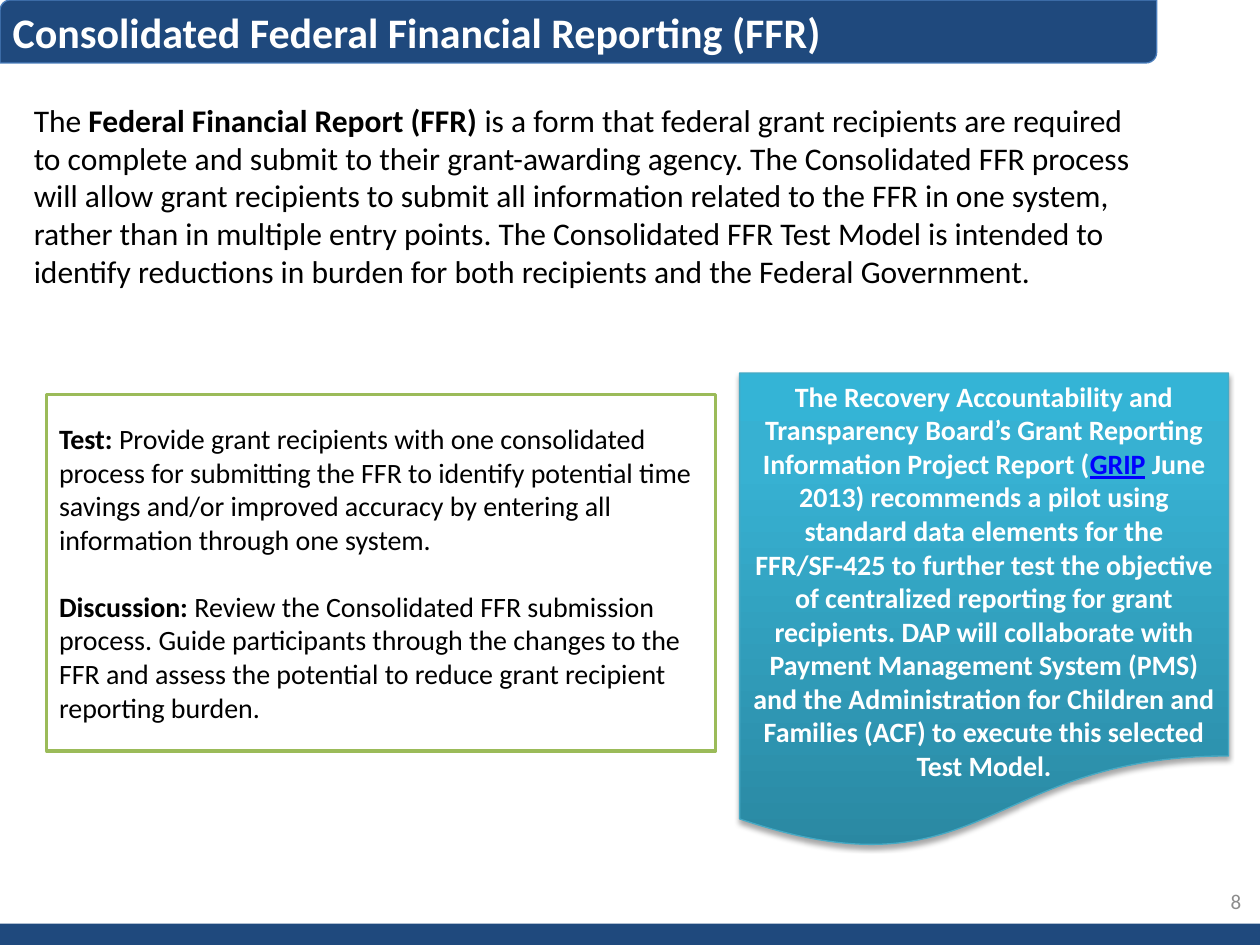
from copy import deepcopy

from pptx import Presentation
from pptx.dml.color import RGBColor
from pptx.enum.shapes import MSO_SHAPE as SHAPE
from pptx.enum.text import MSO_ANCHOR as ANCHOR, PP_ALIGN as ALIGN
from pptx.oxml import parse_xml
from pptx.oxml.ns import nsdecls, qn
from pptx.util import Inches, Pt

FONT = "Calibri"
NAVY = RGBColor(0x1F, 0x49, 0x7D)
BANNER_LINE = RGBColor(0x4B, 0x7E, 0xBC)
GREEN = RGBColor(0x9B, 0xBB, 0x59)
TEAL_LINE = RGBColor(0x46, 0xAA, 0xC5)
TEAL_STOPS = [
    (0, RGBColor(0x2A, 0x88, 0xA2)),
    (0.8, RGBColor(0x37, 0xB1, 0xD2)),
    (1, RGBColor(0x34, 0xB4, 0xD6)),
]
BLACK = RGBColor(0, 0, 0)
WHITE = RGBColor(0xFF, 0xFF, 0xFF)
GREY = RGBColor(0x8C, 0x8C, 0x8C)
LINK_BLUE = RGBColor(0, 0, 0xFF)

TITLE = "Consolidated Federal Financial Reporting (FFR)"
INTRO = [
    ("The ", False),
    ("Federal Financial Report (FFR) ", True),
    ("is a form that federal grant recipients are required to complete and submit to "
     "their grant-awarding agency. The Consolidated FFR process will allow grant "
     "recipients to submit all information related to the FFR in one system, rather than "
     "in multiple entry points. The Consolidated FFR Test Model is intended to identify "
     "reductions in burden for both recipients and the Federal Government.", False),
]
TEST = [
    ("Test: ", True),
    ("Provide grant recipients with one consolidated process for submitting the FFR to "
     "identify potential time savings and/or improved accuracy by entering all "
     "information through one system.", False),
]
DISCUSSION = [
    ("Discussion: ", True),
    ("Review the Consolidated FFR submission process. Guide participants through the "
     "changes to the FFR and assess the potential to reduce grant recipient reporting "
     "burden.", False),
]
GRIP = [
    ("The Recovery Accountability and Transparency Board’s Grant Reporting Information "
     "Project Report (", True),
    ("GRIP", True),
    (" June 2013) recommends a pilot using standard data elements for the FFR/SF-425 to "
     "further test the objective of centralized reporting for grant recipients. DAP will "
     "collaborate with Payment Management System (PMS) and the Administration for "
     "Children and Families (ACF) to execute this selected Test Model.", True),
]


def add_box(s, kind, box, fill=None, line=None, width=0.75):
    """Add a preset shape without shadow."""
    sp = s.shapes.add_shape(kind, *map(Inches, box))
    sp.shadow.inherit = False
    if fill is not None:
        sp.fill.solid()
        sp.fill.fore_color.rgb = fill
    if line is None:
        sp.line.fill.background()
    else:
        sp.line.color.rgb = line
        sp.line.width = Pt(width)
    return sp


def write(sp, paragraphs, size, color, align=ALIGN.LEFT, anchor=ANCHOR.TOP, gap=0):
    """Fill a shape with paragraphs made of (text, bold) runs."""
    tf = sp.text_frame
    tf.word_wrap = True
    tf.vertical_anchor = anchor
    for i, runs in enumerate(paragraphs):
        p = tf.add_paragraph() if i else tf.paragraphs[0]
        p.alignment = align
        if i:
            p.space_before = Pt(gap)
        for text, bold in runs:
            r = p.add_run()
            r.text = text
            r.font.name, r.font.size, r.font.bold = FONT, Pt(size), bold
            r.font.color.rgb = color


def add_text(s, box, runs, size, color, **layout):
    """Add a text box with one paragraph."""
    write(s.shapes.add_textbox(*map(Inches, box)), [runs], size, color, **layout)


def set_title(s, box):
    """Move the title placeholder into the banner and format it."""
    sp = s.shapes.title
    sp.left, sp.top, sp.width, sp.height = map(Inches, box)
    write(sp, [[(TITLE, True)]], 24, WHITE)


def shade(sp, stops):
    """Give a shape an upward gradient through the given stops."""
    sp.fill.gradient()
    sp.fill.gradient_angle = 90
    gs_list = sp.element.spPr.find(".//" + qn("a:gsLst"))
    while len(gs_list) < len(stops):
        gs_list.append(deepcopy(gs_list[-1]))
    for stop, (position, color) in zip(sp.fill.gradient_stops, stops):
        stop.position = position
        stop.color.rgb = color


def drop_shadow(sp, blur, distance, alpha):
    """Cast a soft black shadow straight down."""
    effects = sp.element.spPr.find(qn("a:effectLst"))
    effects.append(parse_xml(
        f'<a:outerShdw {nsdecls("a")} blurRad="{Pt(blur)}" dist="{Pt(distance)}" '
        f'dir="5400000" rotWithShape="0"><a:srgbClr val="000000">'
        f'<a:alpha val="{alpha * 1000}"/></a:srgbClr></a:outerShdw>'))


def add_report_note(s, box):
    """Add the wavy teal document with its highlighted report name."""
    sp = add_box(s, SHAPE.FLOWCHART_DOCUMENT, box, line=TEAL_LINE)
    shade(sp, TEAL_STOPS)
    drop_shadow(sp, 3.1, 1.8, 35)
    write(sp, [GRIP], 16, WHITE, align=ALIGN.CENTER)
    link = sp.text_frame.paragraphs[0].runs[1].font
    link.color.rgb = LINK_BLUE
    link.underline = True


def main():
    """Build the slide and save it."""
    prs = Presentation()
    prs.slide_width, prs.slide_height = Inches(10), Inches(7.5)
    s = prs.slides.add_slide(prs.slide_layouts[5])

    footer = add_box(s, SHAPE.RECTANGLE, (0, 7.33, 10, 0.17), NAVY)
    banner = add_box(s, SHAPE.ROUND_2_DIAG_RECTANGLE, (0, 0, 9.18, 0.5), NAVY, BANNER_LINE)
    for sp in (footer, banner):
        s.shapes.title.element.addprevious(sp.element)
    set_title(s, (0, 0, 9, 0.5))

    add_text(s, (7.62, 6.95, 2.33, 0.4), [("8", False)], 12, GREY,
             align=ALIGN.RIGHT, anchor=ANCHOR.MIDDLE)
    add_text(s, (0.17, 0.75, 9, 1.62), INTRO, 18, BLACK)
    add_report_note(s, (5.87, 2.96, 3.88, 3.79))
    panel = add_box(s, SHAPE.RECTANGLE, (0.37, 3.13, 5.31, 2.83), WHITE, GREEN, 2)
    write(panel, [TEST, DISCUSSION], 16, BLACK, anchor=ANCHOR.MIDDLE, gap=19.2)

    prs.save("out.pptx")


if __name__ == "__main__":
    main()
